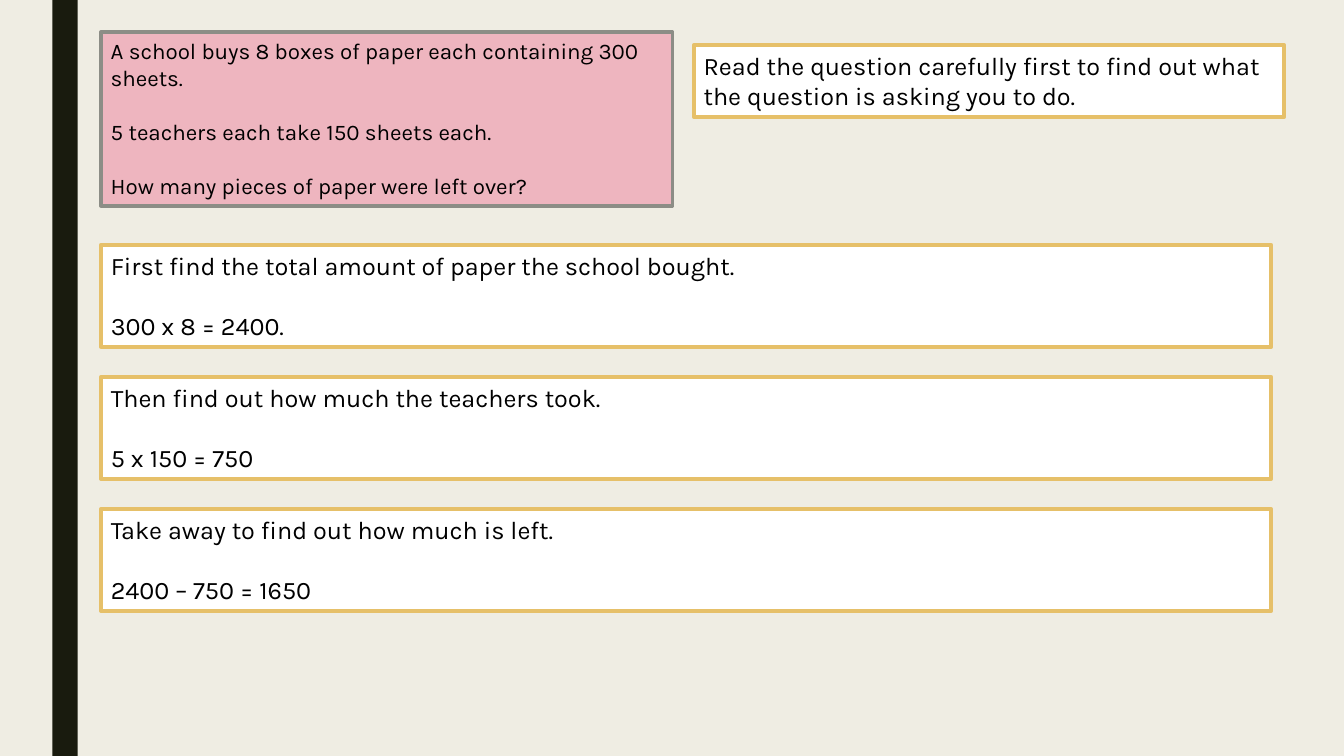
"""Build a worked multi-step word problem slide."""
from pptx import Presentation
from pptx.dml.color import RGBColor
from pptx.enum.shapes import MSO_SHAPE
from pptx.enum.text import MSO_ANCHOR, PP_ALIGN
from pptx.util import Inches, Pt

RECTANGLE = MSO_SHAPE.RECTANGLE
TOP = MSO_ANCHOR.TOP
LEFT = PP_ALIGN.LEFT

COLORS = {
    "background": "EFEDE3",
    "bar": "191B0E",
    "question": "EEB5BF",
    "question_line": "8C8D86",
    "step": "FFFFFF",
    "step_line": "E6C069",
    "text": "000000",
}
FONT = "Karla"
LINE_WIDTH = 2.75

QUESTION = [
    "A school buys 8 boxes of paper each containing 300 sheets.",
    "5 teachers each take 150 sheets each.",
    "How many pieces of paper were left over?",
]
ADVICE = ["Read the question carefully first to find out what the question is asking you to do."]
STEPS = [
    ["First find the total amount of paper the school bought.", "300 x 8 = 2400."],
    ["Then find out how much the teachers took.", "5 x 150 = 750"],
    ["Take away to find out how much is left.", "2400 – 750 = 1650"],
]
STEP_TOP, STEP_PITCH = 2.43, 1.31


def color(name):
    return RGBColor.from_string(COLORS[name])


def add_rectangle(slide, box, fill):
    shape = slide.shapes.add_shape(RECTANGLE, *map(Inches, box))
    shape.shadow.inherit = False
    shape.fill.solid()
    shape.fill.fore_color.rgb = color(fill)
    shape.line.fill.background()
    return shape


def add_text_panel(slide, box, lines, style="step", size=18, gap=21.5):
    shape = add_rectangle(slide, box, style)
    shape.line.color.rgb = color(style + "_line")
    shape.line.width = Pt(LINE_WIDTH)
    frame = shape.text_frame
    frame.word_wrap = True
    frame.vertical_anchor = TOP
    frame.text = "\n".join(lines)
    for index, paragraph in enumerate(frame.paragraphs):
        paragraph.alignment = LEFT
        paragraph.space_before = Pt(gap if index else 0)
        paragraph.font.name = FONT
        paragraph.font.size = Pt(size)
        paragraph.font.color.rgb = color("text")


def main():
    presentation = Presentation()
    presentation.slide_width = Inches(13.33)
    presentation.slide_height = Inches(7.5)
    slide = presentation.slides.add_slide(presentation.slide_layouts[6])
    slide.background.fill.solid()
    slide.background.fill.fore_color.rgb = color("background")

    add_rectangle(slide, (0.52, 0, 0.25, 7.5), "bar")
    add_text_panel(slide, (1, 0.32, 5.67, 1.72), QUESTION, "question", 16, 19.5)
    add_text_panel(slide, (6.88, 0.45, 5.86, 0.71), ADVICE)
    for index, lines in enumerate(STEPS):
        add_text_panel(slide, (1, STEP_TOP + index * STEP_PITCH, 11.61, 1.01), lines)

    presentation.save("out.pptx")


if __name__ == "__main__":
    main()
